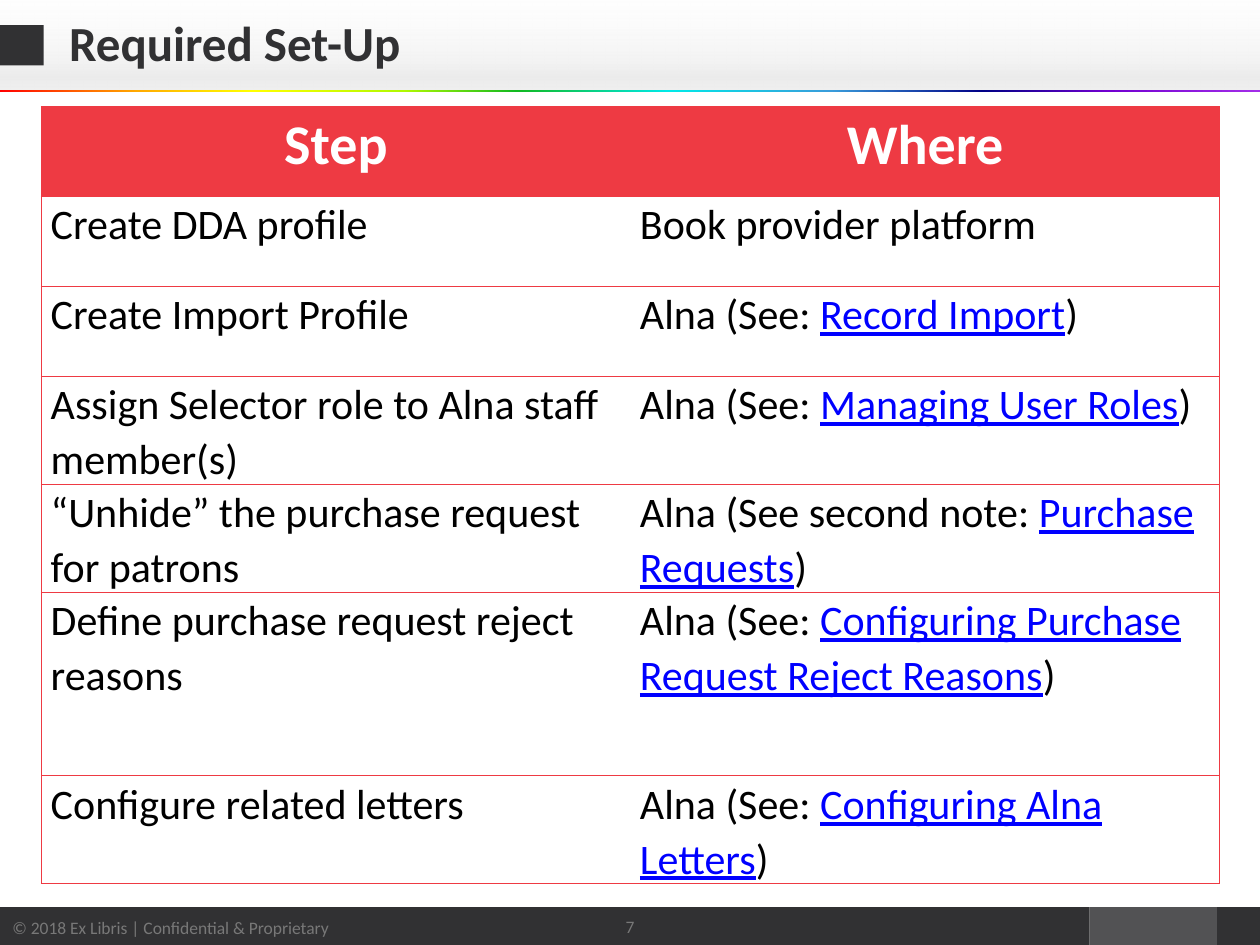
from lxml import etree
from pptx import Presentation
from pptx.dml.color import RGBColor
from pptx.enum.shapes import MSO_SHAPE
from pptx.enum.text import MSO_ANCHOR, PP_ALIGN
from pptx.oxml.ns import qn
from pptx.util import Pt

COLORS = {
    "dark": "313133", "mid": "525254", "muted": "787878", "red": "EE3A43",
    "white": "FFFFFF", "black": "000000", "link": "0000FF",
}
# Gradient stops: position %, colour, opacity %
SHEEN = [(0, "FAFAFA", 12), (66, "D7D7D7", 30), (83, "D7D7D7", 47), (100, "E4E4E4", 54)]
RAINBOW = [(pos, color, 100) for pos, color in (
    (0, "A22DE8"), (12, "7200D1"), (22, "000086"), (34, "399CDB"), (47, "00E9E8"),
    (59, "11B920"), (68, "B1F900"), (80, "FFFF00"), (89, "FFAB00"), (100, "FF0000"))]


# Each cell is a list of (text, is_link) runs
def see(target, lead="See"):
    return [(f"Alna ({lead}: ", False), (target, True), (")", False)]


def plain(text):
    return [(text, False)]


STEPS = [
    (plain("Step"), plain("Where")),
    (plain("Create DDA profile"), plain("Book provider platform")),
    (plain("Create Import Profile"), see("Record Import")),
    (plain("Assign Selector role to Alna staff member(s)"), see("Managing User Roles")),
    (plain("“Unhide” the purchase request for patrons"),
     see("Purchase Requests", "See second note")),
    (plain("Define purchase request reject reasons"),
     see("Configuring Purchase Request Reject Reasons")),
    (plain("Configure related letters"), see("Configuring Alna Letters")),
]


class Deck:
    font = "Calibri"

    def __init__(self, slide):
        self.s = slide

    def color(self, name):
        return RGBColor.from_string(COLORS[name])

    def run(self, p, text, size, color, bold=False, underline=False):
        r = p.add_run()
        r.text = text
        r.font.name = self.font
        r.font.size = Pt(size)
        r.font.bold = bold
        r.font.underline = underline
        r.font.color.rgb = self.color(color)

    def rect(self, x, y, w, h, color=None):
        sp = self.s.shapes.add_shape(MSO_SHAPE.RECTANGLE, Pt(x), Pt(y), Pt(w), Pt(h))
        sp.shadow.inherit = False
        sp.line.fill.background()
        if color:
            sp.fill.solid()
            sp.fill.fore_color.rgb = self.color(color)
        return sp

    def gradient(self, x, y, w, h, stops, angle):
        sp = self.rect(x, y, w, h)
        sp.fill.background()
        grad = etree.Element(qn("a:gradFill"), rotWithShape="1")
        gs_list = etree.SubElement(grad, qn("a:gsLst"))
        for pos, color, opacity in stops:
            gs = etree.SubElement(gs_list, qn("a:gs"), pos=str(pos * 1000))
            clr = etree.SubElement(gs, qn("a:srgbClr"), val=color)
            if opacity < 100:
                etree.SubElement(clr, qn("a:alpha"), val=str(opacity * 1000))
        etree.SubElement(grad, qn("a:lin"), ang=str(angle * 60000), scaled="0")
        sp_pr = sp._element.spPr
        sp_pr.replace(sp_pr.find(qn("a:noFill")), grad)

    def label(self, sp, text, size, color, align=PP_ALIGN.LEFT, bold=False, spacing=None):
        tf = sp.text_frame
        tf.word_wrap = True
        tf.vertical_anchor = MSO_ANCHOR.MIDDLE
        p = tf.paragraphs[0]
        p.alignment = align
        p.line_spacing = spacing
        self.run(p, text, size, color, bold)

    def text(self, x, y, w, h, *args, **style):
        self.label(self.s.shapes.add_textbox(Pt(x), Pt(y), Pt(w), Pt(h)), *args, **style)

    def borders(self, cell, sides):
        tc_pr = cell._tc.get_or_add_tcPr()
        for i, side in enumerate("LRTB"):
            ln = etree.Element(qn(f"a:ln{side}"), w=str(Pt(0.5)))
            if side in sides:
                fill = etree.SubElement(ln, qn("a:solidFill"))
                etree.SubElement(fill, qn("a:srgbClr"), val=COLORS["red"])
            else:
                etree.SubElement(ln, qn("a:noFill"))
            tc_pr.insert(i, ln)

    def table(self, x, y, col_w, heights, rows):
        tb = self.s.shapes.add_table(len(rows), 2, Pt(x), Pt(y),
                                     Pt(2 * col_w), Pt(sum(heights))).table
        tb.horz_banding = False
        for col in tb.columns:
            col.width = Pt(col_w)
        for i, (row, height) in enumerate(zip(rows, heights)):
            tb.rows[i].height = Pt(height)
            for j, runs in enumerate(row):
                self.cell(tb.cell(i, j), runs, header=i == 0)
                self.borders(tb.cell(i, j), "LTB" if j == 0 else "RTB")

    def cell(self, cell, runs, header):
        cell.margin_left = cell.margin_right = Pt(5.4)
        cell.margin_top = cell.margin_bottom = Pt(0)
        if header:
            cell.fill.solid()
            cell.fill.fore_color.rgb = self.color("red")
        else:
            cell.fill.background()
        p = cell.text_frame.paragraphs[0]
        p.alignment = PP_ALIGN.CENTER if header else PP_ALIGN.LEFT
        p.line_spacing = 1.07
        for text, is_link in runs:
            if header:
                self.run(p, text, 32, "white", bold=True)
            else:
                self.run(p, text, 24, "link" if is_link else "black", underline=is_link)


def main():
    prs = Presentation()
    prs.slide_width, prs.slide_height = Pt(720), Pt(540)
    deck = Deck(prs.slides.add_slide(prs.slide_layouts[6]))

    # Footer bar and title band
    deck.rect(622.5, 518.4, 73, 23, "mid")
    deck.rect(695.5, 518.4, 25, 23, "dark")
    deck.gradient(-0.5, 0.5, 720.5, 52, SHEEN, 90)
    footer = deck.rect(0, 518.4, 622.5, 23, "dark")
    deck.label(footer, "© 2018 Ex Libris | Confidential & Proprietary", 10, "muted")
    deck.rect(0, 14.4, 25, 23, "dark")
    deck.gradient(0, 51.6, 720, 1, RAINBOW, 180)

    # Title and page number
    deck.text(32.4, 1.4, 652, 49.7, "Required Set-Up", 28, "dark", bold=True, spacing=0.9)
    deck.text(318, 515.5, 84, 28, "7", 10, "muted", align=PP_ALIGN.CENTER)

    # Steps table
    deck.table(23.6, 60.9, 336.7, [51.4] * 5 + [105, 51.4], STEPS)

    prs.save("out.pptx")


if __name__ == "__main__":
    main()
